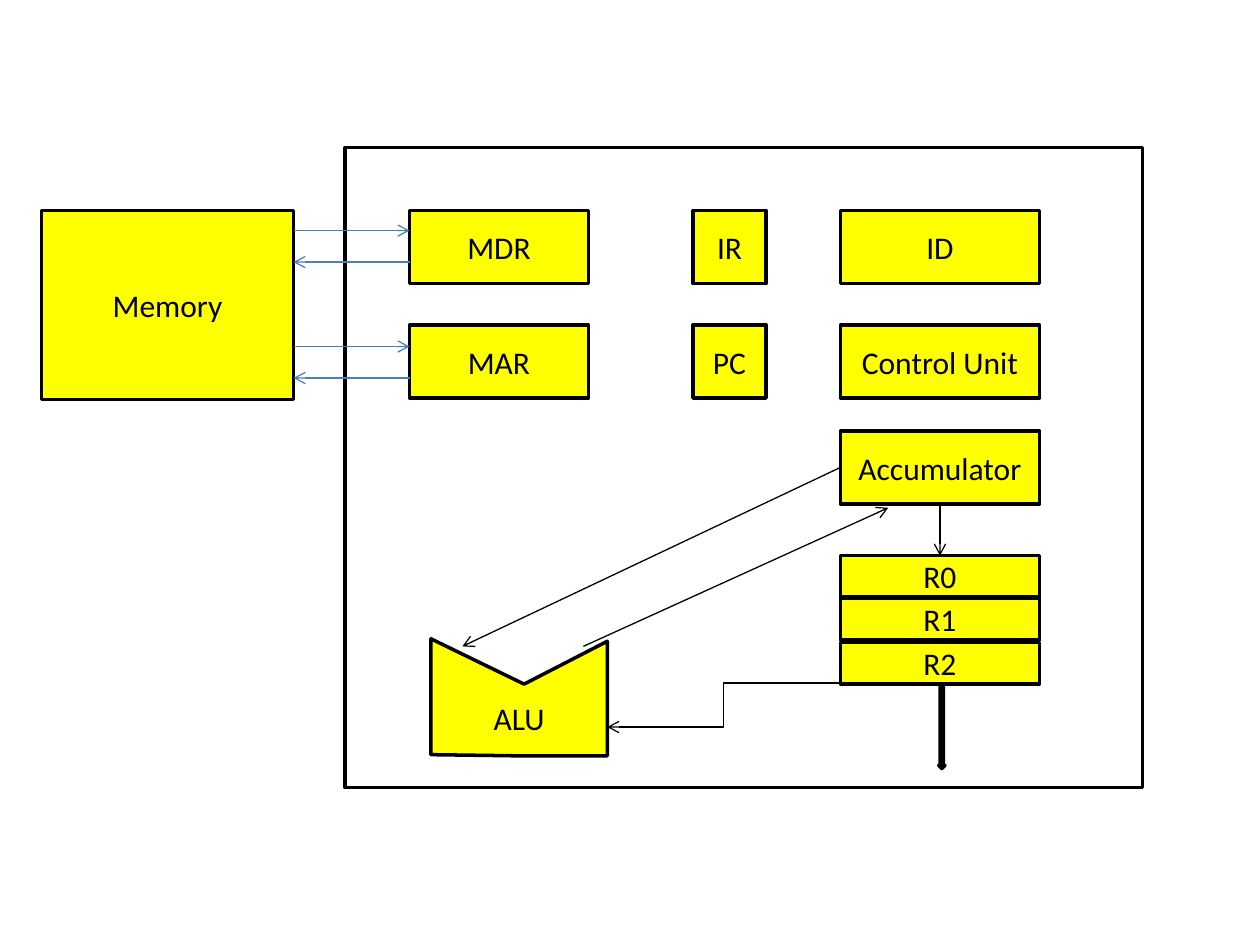
"""Build a slide with a block diagram of a processor and its memory."""
from lxml.etree import SubElement
from pptx import Presentation
from pptx.dml.color import RGBColor
from pptx.enum.shapes import MSO_CONNECTOR as LINK, MSO_SHAPE as SHAPE
from pptx.enum.text import MSO_ANCHOR as ANCHOR, PP_ALIGN as ALIGN
from pptx.oxml.ns import qn
from pptx.util import Inches, Pt

COLORS = {"black": "000000", "white": "FFFFFF", "block": "FFFF00", "bus": "4B7EBC", "stem": "4F81BD"}


def style(shape, fill, label=""):
    shape.shadow.inherit = False
    shape.fill.solid()
    shape.fill.fore_color.rgb = RGBColor.from_string(COLORS[fill])
    shape.line.color.rgb = RGBColor.from_string(COLORS["black"])
    shape.line.width = Pt(2)
    if label:
        frame = shape.text_frame
        frame.text = label
        frame.word_wrap = True
        frame.vertical_anchor = ANCHOR.MIDDLE
        paragraph = frame.paragraphs[0]
        paragraph.alignment = ALIGN.CENTER
        paragraph.font.name = "Calibri"
        paragraph.font.size = Pt(18)
        paragraph.font.color.rgb = RGBColor.from_string(COLORS["black"])
    return shape


def arrow(start, end, color="black", kind=LINK.STRAIGHT):
    link = shapes.add_connector(kind, *(Inches(v) for v in (*start, *end)))
    link.line.color.rgb = RGBColor.from_string(COLORS[color])
    link.line.width = Pt(0.75)
    SubElement(link.line._get_or_add_ln(), qn("a:tailEnd"), type="arrow")
    SubElement(link._element.spPr, qn("a:effectLst"))
    return link


prs = Presentation()
prs.slide_width, prs.slide_height = Inches(10), Inches(7.5)
shapes = prs.slides.add_slide(prs.slide_layouts[6]).shapes

processor = shapes.add_shape(SHAPE.RECTANGLE, Inches(2.74), Inches(1.17), Inches(6.33), Inches(5.08))
style(processor, "white")

blocks = {}
for name, left, top, width, height in [
    ("MDR", 3.25, 1.67, 1.42, 0.58),
    ("MAR", 3.25, 2.58, 1.42, 0.58),
    ("IR", 5.5, 1.67, 0.58, 0.58),
    ("PC", 5.5, 2.58, 0.58, 0.58),
    ("ID", 6.67, 1.67, 1.58, 0.58),
    ("Control Unit", 6.67, 2.58, 1.58, 0.58),
    ("Accumulator", 6.67, 3.42, 1.58, 0.58),
    ("R0", 6.67, 4.41, 1.58, 0.33),
    ("R1", 6.67, 4.75, 1.58, 0.33),
    ("R2", 6.67, 5.1, 1.58, 0.33),
    ("Memory", 0.33, 1.67, 2, 1.5),
]:
    box = shapes.add_shape(SHAPE.RECTANGLE, Inches(left), Inches(top), Inches(width), Inches(height))
    blocks[name] = style(box, "block", name)

more_registers = shapes.add_shape(SHAPE.DOWN_ARROW, Inches(7.45), Inches(5.43), Inches(0.05), Inches(0.67))
style(more_registers, "stem")

corners = [(3.42, 5.07), (4.16, 5.43), (4.82, 5.09), (4.82, 6), (4.18, 6), (3.42, 5.99)]
outline = [(Inches(x), Inches(y)) for x, y in corners]
builder = shapes.build_freeform(*outline[0], scale=1.0)
builder.add_line_segments(outline[1:], close=True)
alu = style(builder.convert_to_shape(), "block", "ALU")
alu.text_frame.margin_top = Inches(0.38)

for read_y in (1.83, 2.75):
    write_y = read_y + 0.25
    arrow((2.33, read_y), (3.25, read_y), "bus")
    arrow((3.25, write_y), (2.33, write_y), "bus")

store = arrow((7.46, 4), (7.46, 4.41))
store.begin_connect(blocks["Accumulator"], 2)
store.end_connect(blocks["R0"], 0)
arrow((6.67, 5.42), (4.82, 5.77), kind=LINK.ELBOW)
arrow((4.63, 5.13), (7.05, 4.03))
operand = arrow((6.67, 3.71), (3.67, 5.13))
operand.begin_connect(blocks["Accumulator"], 1)

prs.save("out.pptx")
